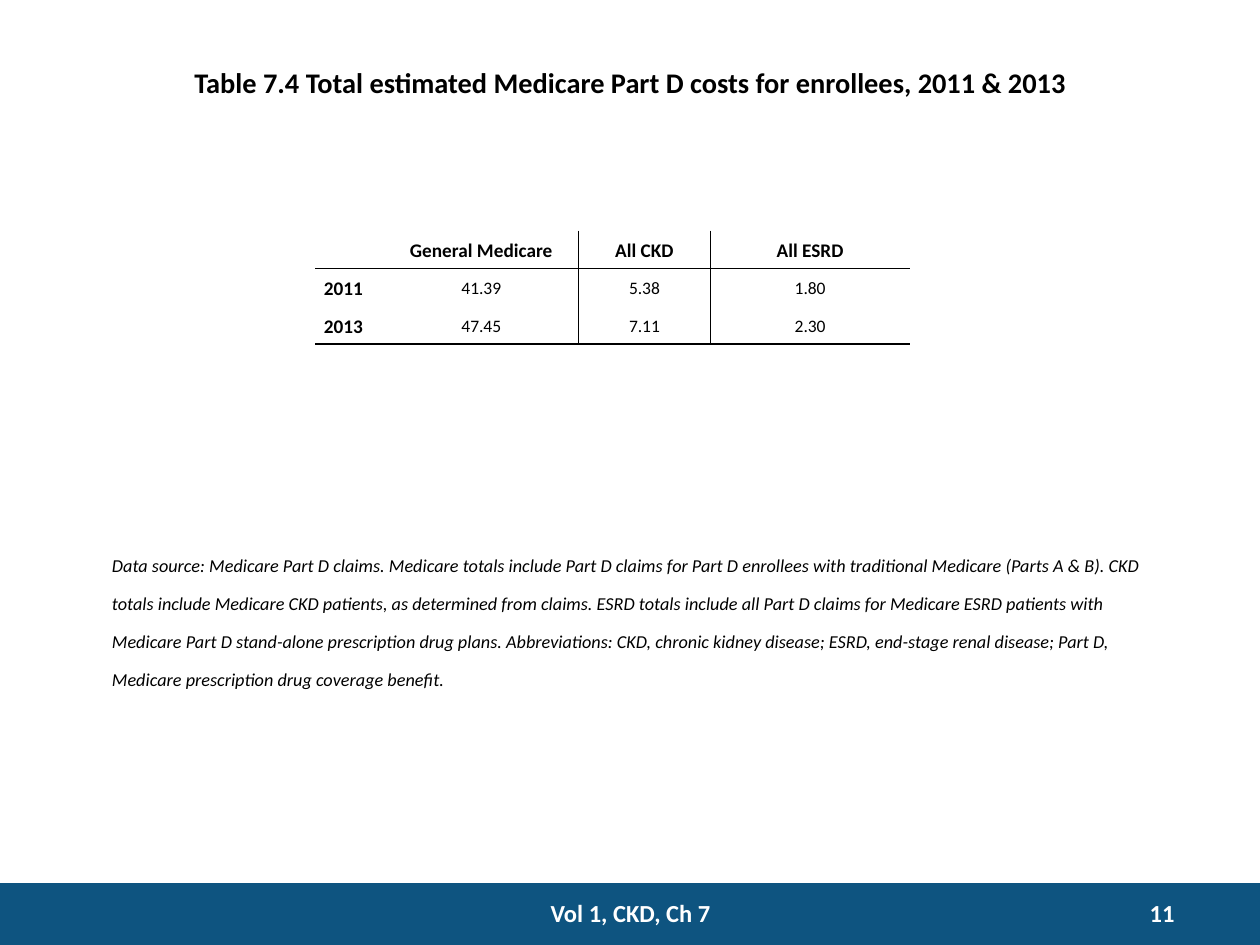
from lxml.etree import SubElement
from pptx import Presentation
from pptx.dml.color import RGBColor
from pptx.enum.shapes import MSO_SHAPE
from pptx.enum.text import MSO_ANCHOR, PP_ALIGN
from pptx.oxml.ns import qn
from pptx.util import Inches, Pt

BLACK = RGBColor(0x00, 0x00, 0x00)
WHITE = RGBColor(0xFF, 0xFF, 0xFF)
NAVY = RGBColor(0x0E, 0x54, 0x80)
FONT = "Calibri"

TITLE = "Table 7.4 Total estimated Medicare Part D costs for enrollees, 2011 & 2013"
SOURCE = (
    "Data source: Medicare Part D claims. Medicare totals include Part D claims "
    "for Part D enrollees with traditional Medicare (Parts A & B). CKD totals "
    "include Medicare CKD patients, as determined from claims. ESRD totals include "
    "all Part D claims for Medicare ESRD patients with Medicare Part D stand-alone "
    "prescription drug plans. Abbreviations: CKD, chronic kidney disease; ESRD, "
    "end-stage renal disease; Part D, Medicare prescription drug coverage benefit."
)
COSTS = [
    ["", "General Medicare", "All CKD", "All ESRD"],
    ["2011", "41.39", "5.38", "1.80"],
    ["2013", "47.45", "7.11", "2.30"],
]
COL_WIDTHS = [0.55, 1.54, 1.05, 1.58]
ROW_HEIGHT = 0.3


def format_run(r, size, color, bold=False, italic=False):
    r.font.name = FONT
    r.font.size = Pt(size)
    r.font.color.rgb = color
    r.font.bold = bold
    r.font.italic = italic


def add_text(s, box, text, size, color, align=PP_ALIGN.LEFT, bold=False,
             italic=False, raised=False):
    tf = s.shapes.add_textbox(*map(Inches, box)).text_frame
    tf.word_wrap = True
    p = tf.paragraphs[0]
    p.text = text
    p.alignment = align
    r = p.runs[0]
    format_run(r, size, color, bold, italic)
    if raised:
        r.font._element.set("baseline", "30000")


def set_borders(cell, visible):
    tcPr = cell._tc.get_or_add_tcPr()
    for side in "LRTB":
        ln = SubElement(tcPr, qn(f"a:ln{side}"), w=str(Pt(1)))
        if side in visible:
            fill = SubElement(ln, qn("a:solidFill"))
            SubElement(fill, qn("a:srgbClr"), val=str(BLACK))
        else:
            SubElement(ln, qn("a:noFill"))


def fill_cell(cell, text, row, col):
    visible = ""
    if col > 1:
        visible += "L"
    if 0 < col < len(COL_WIDTHS) - 1:
        visible += "R"
    if row == 1:
        visible += "T"
    if row in (0, len(COSTS) - 1):
        visible += "B"
    set_borders(cell, visible)
    cell.fill.background()
    cell.vertical_anchor = MSO_ANCHOR.MIDDLE
    cell.margin_left = cell.margin_right = Inches(0.07)
    cell.margin_top = cell.margin_bottom = 0
    p = cell.text_frame.paragraphs[0]
    p.text = text
    p.line_spacing = 1.15
    p.alignment = PP_ALIGN.CENTER if col else PP_ALIGN.LEFT
    heading = row == 0 or col == 0
    for r in p.runs:
        format_run(r, 11 if heading else 10, BLACK, bold=heading)
    if not text:
        SubElement(p._p, qn("a:endParaRPr"), sz="1100")


def add_cost_table(s, left, top):
    table = s.shapes.add_table(
        len(COSTS), len(COL_WIDTHS), Inches(left), Inches(top),
        Inches(sum(COL_WIDTHS)), Inches(ROW_HEIGHT * len(COSTS))).table
    table.first_row = table.horz_banding = False
    for column, width in zip(table.columns, COL_WIDTHS):
        column.width = Inches(width)
    for i, values in enumerate(COSTS):
        table.rows[i].height = Inches(ROW_HEIGHT)
        for j, text in enumerate(values):
            fill_cell(table.cell(i, j), text, i, j)


def add_footer(s, left, top, width, height):
    bar = s.shapes.add_shape(
        MSO_SHAPE.RECTANGLE, *map(Inches, (left, top, width, height)))
    bar.shadow.inherit = False
    bar.fill.solid()
    bar.fill.fore_color.rgb = NAVY
    bar.line.fill.background()
    add_text(s, (left + 3.92, top + 0.07, 2.17, 0.33), "Vol 1, CKD, Ch 7",
             14, WHITE, PP_ALIGN.CENTER, bold=True)
    add_text(s, (left + 8.42, top + 0.07, 1, 0.3), "11",
             14, WHITE, PP_ALIGN.RIGHT, bold=True)


def main():
    prs = Presentation()
    prs.slide_width, prs.slide_height = Inches(10), Inches(7.5)
    s = prs.slides.add_slide(prs.slide_layouts[6])
    add_footer(s, 0, 7.01, 10, 0.5)
    add_text(s, (0.79, 4.32, 8.42, 0.91), SOURCE, 18, BLACK,
             italic=True, raised=True)
    add_text(s, (0, 0.42, 10, 0.42), TITLE, 28, BLACK,
             PP_ALIGN.CENTER, bold=True, raised=True)
    add_cost_table(s, 2.5, 1.83)
    prs.save("out.pptx")


if __name__ == "__main__":
    main()
